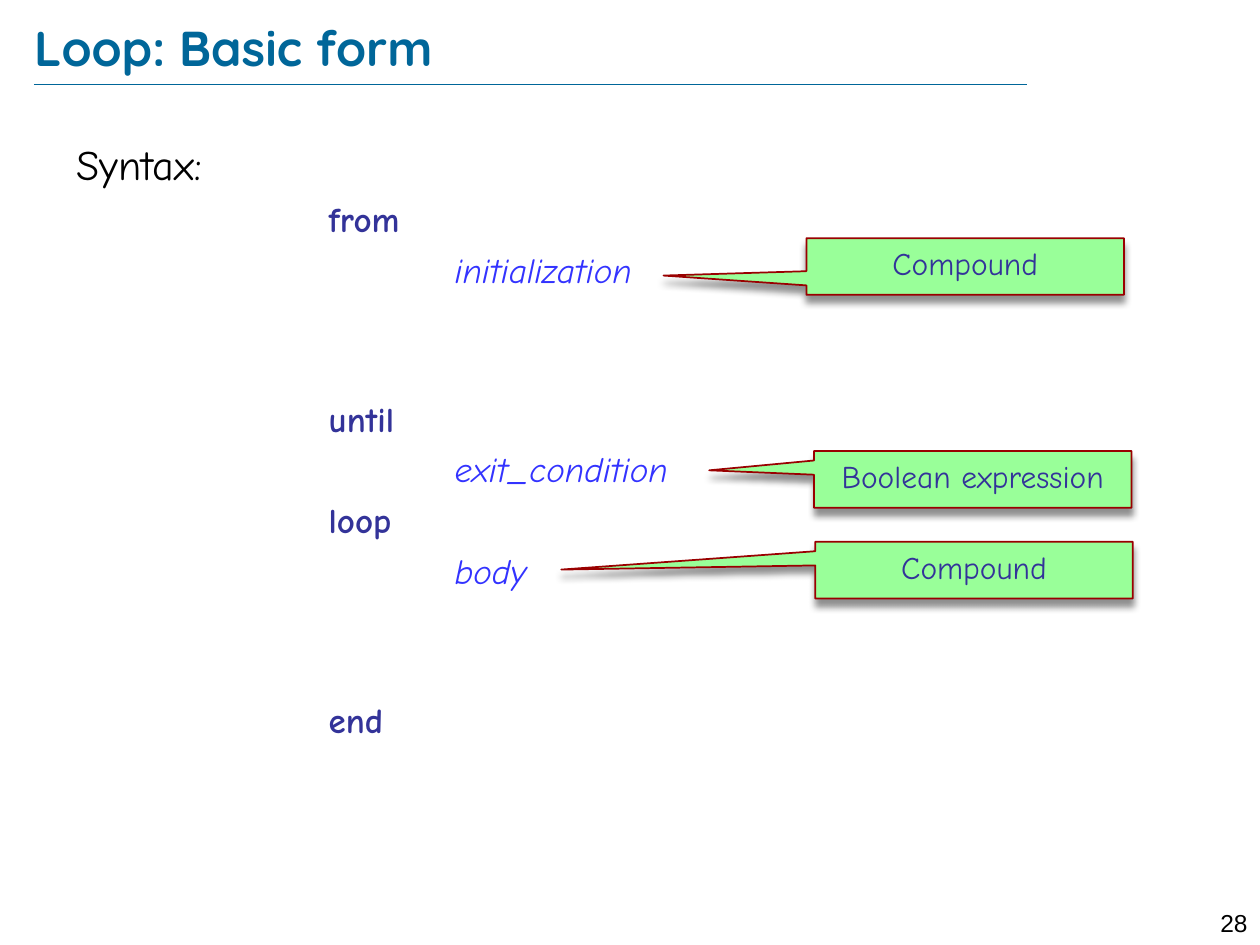
from dataclasses import dataclass

import lxml.etree
import pptx
import pptx.dml.color
import pptx.enum.shapes
import pptx.enum.text
import pptx.oxml.ns
import pptx.util
from pptx.util import Inches


@dataclass(frozen=True)
class Theme:
    heading_font: str = "Quicksand"
    body_font: str = "Comic Neue"
    number_font: str = "Arial"
    heading: str = "006699"
    text: str = "000000"
    keyword: str = "333399"
    placeholder: str = "3333FF"
    callout_fill: str = "99FF99"
    callout_line: str = "990000"
    title_size: int = 28
    syntax_size: int = 24
    code_size: int = 20
    callout_size: int = 18
    number_size: int = 14


theme = Theme()
rgb = pptx.dml.color.RGBColor.from_string
qn = pptx.oxml.ns.qn
align = pptx.enum.text.PP_ALIGN
middle = pptx.enum.text.MSO_ANCHOR.MIDDLE


def style(paragraph, font_name, size, color, bold=False, italic=False):
    font = paragraph.font
    font.name, font.size = font_name, pptx.util.Pt(size)
    font.color.rgb = rgb(color)
    font.bold, font.italic = bold, italic


def add_text_frame(left, top, width, height):
    box = slide.shapes.add_textbox(Inches(left), Inches(top), Inches(width), Inches(height))
    box.text_frame.word_wrap = True
    return box.text_frame


deck = pptx.Presentation()
deck.slide_width, deck.slide_height = Inches(10), Inches(7.5)
slide = deck.slides.add_slide(deck.slide_layouts[6])

# Heading and the rule below it
rule = slide.shapes.add_connector(
    pptx.enum.shapes.MSO_CONNECTOR.STRAIGHT,
    Inches(0.27), Inches(0.67), Inches(8.15), Inches(0.67))
rule.line.color.rgb = rgb(theme.heading)
rule.line.width = pptx.util.Pt(0.25)
lxml.etree.SubElement(rule._element.spPr, qn("a:effectLst"))

title = add_text_frame(0.27, 0.13, 8.69, 0.48)
title.margin_left = title.margin_right = title.margin_top = title.margin_bottom = 0
title.vertical_anchor = middle
title.text = "Loop: Basic form"
style(title.paragraphs[0], theme.heading_font, theme.title_size, theme.heading, bold=True)

page_number = add_text_frame(9.45, 7.16, 0.55, 0.24)
page_number.text = "28"
page_number.paragraphs[0].alignment = align.RIGHT
style(page_number.paragraphs[0], theme.number_font, theme.number_size, theme.text)

# Loop syntax: keywords at two inches, their parts one inch further in
syntax = add_text_frame(0.51, 1.05, 9.21, 5.78)
syntax.text = "Syntax:"
style(syntax.paragraphs[0], theme.body_font, theme.syntax_size, theme.text)

line_gap = 5
section_gap = line_gap + 2 * 28
for wording, is_keyword, gap in [
    ("from", True, line_gap),
    ("initialization", False, line_gap),
    ("until", True, section_gap),
    ("exit_condition", False, line_gap),
    ("loop", True, line_gap),
    ("body", False, line_gap),
    ("end", True, section_gap),
]:
    code_line = syntax.add_paragraph()
    code_line.text = wording
    code_line.space_before = pptx.util.Pt(gap)
    code_line._p.get_or_add_pPr().set("marL", str(Inches(2 if is_keyword else 3)))
    style(code_line, theme.body_font, theme.code_size,
          theme.keyword if is_keyword else theme.placeholder,
          bold=is_keyword, italic=not is_keyword)

# Callouts pointing at each part of the loop
for wording, left, top, tip_x, tip_y in [
    ("Compound", 6.4, 1.89, -0.955, 0.164),
    ("Boolean expression", 6.46, 3.58, -0.832, -0.163),
    ("Compound", 6.47, 4.3, -1.303, -0.008),
]:
    callout = slide.shapes.add_shape(
        pptx.enum.shapes.MSO_SHAPE.RECTANGULAR_CALLOUT,
        Inches(left), Inches(top), Inches(2.52), Inches(0.45))
    callout.adjustments[0], callout.adjustments[1] = round(tip_x, 2), round(tip_y, 2)
    callout.fill.solid()
    callout.fill.fore_color.rgb = rgb(theme.callout_fill)
    callout.line.color.rgb = rgb(theme.callout_line)
    callout.line.width = pptx.util.Pt(1)

    callout.shadow.inherit = False
    effects = callout._element.spPr.find(qn("a:effectLst"))
    shadow = lxml.etree.SubElement(
        effects, qn("a:outerShdw"), blurRad=str(pptx.util.Pt(4)),
        dist=str(pptx.util.Pt(4)), dir=str(90 * 60000), rotWithShape="0")
    shade = lxml.etree.SubElement(shadow, qn("a:srgbClr"), val=theme.text)
    lxml.etree.SubElement(shade, qn("a:alpha"), val="43000")

    label = callout.text_frame
    label.word_wrap = True
    label.margin_left = label.margin_right = 0
    label.vertical_anchor = middle
    label.text = wording
    label.paragraphs[0].alignment = align.CENTER
    label.paragraphs[0].line_spacing = 0.8
    style(label.paragraphs[0], theme.body_font, theme.callout_size, theme.keyword)

deck.save("out.pptx")
